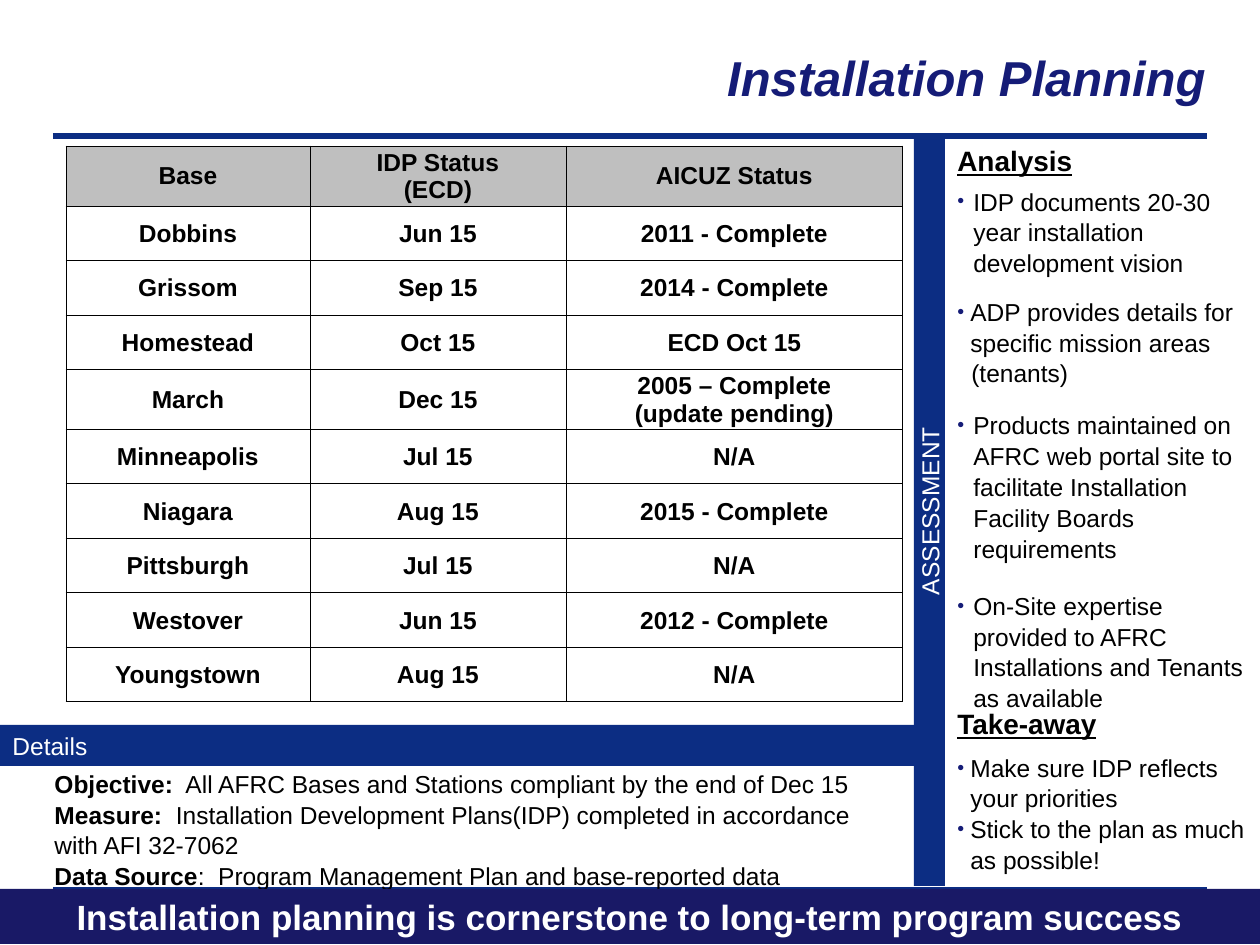
from dataclasses import dataclass

from lxml.etree import SubElement
from pptx import Presentation
from pptx.dml.color import RGBColor
from pptx.enum.shapes import MSO_CONNECTOR, MSO_SHAPE
from pptx.enum.text import MSO_ANCHOR, PP_ALIGN
from pptx.oxml.ns import qn
from pptx.util import Emu, Pt


@dataclass(frozen=True)
class Theme:
    font: str = "Arial"
    blue: str = "0C2D83"
    navy: str = "191966"
    title_ink: str = "151C77"
    black: str = "000000"
    white: str = "FFFFFF"
    header_gray: str = "BFBFBF"
    body: int = 14
    heading: int = 16
    banner: int = 20
    title: int = 28
    spacing: float = 1.05


THEME = Theme()

# Content
TITLE = "Installation Planning"
BANNER = "Installation planning is cornerstone to long-term program success"
STATUS_ROWS = [
    ("Base", "IDP Status\n(ECD)", "AICUZ Status"),
    ("Dobbins", "Jun 15", "2011 - Complete"),
    ("Grissom", "Sep 15", "2014 - Complete"),
    ("Homestead", "Oct 15", "ECD Oct 15"),
    ("March", "Dec 15", "2005 – Complete\n(update pending)"),
    ("Minneapolis", "Jul 15", "N/A"),
    ("Niagara", "Aug 15", "2015 - Complete"),
    ("Pittsburgh", "Jul 15", "N/A"),
    ("Westover", "Jun 15", "2012 - Complete"),
    ("Youngstown", "Aug 15", "N/A"),
]
DETAILS = [
    ("Objective:", "  All AFRC Bases and Stations compliant by the end of Dec 15"),
    ("Measure:", "  Installation Development Plans(IDP) completed in accordance "
                 "with AFI 32-7062"),
    ("Data Source", ":  Program Management Plan and base-reported data"),
]
# Text, bulleted, indent in px, space before in points
ANALYSIS = [
    ("IDP documents 20-30 year installation development vision", True, 16, 0),
    ("ADP provides details for specific mission areas", True, 13, 10),
    ("(tenants)", False, 14, 0),
    ("Products maintained on AFRC web portal site to facilitate Installation "
     "Facility Boards requirements", True, 16, 12),
    ("On-Site expertise provided to AFRC Installations and Tenants as available",
     True, 16, 15),
]
TAKE_AWAY = [
    ("Make sure IDP reflects your priorities", True, 13, 0),
    ("Stick to the plan as much as possible!", True, 13, 0),
]

# Layout in px
SLIDE_W, SLIDE_H = 1260, 945
RULE_LEFT, RULE_RIGHT, RULE_TOP, RULE_BOTTOM = 53, 1207, 136, 890
BAR_LEFT, BAR_W = 914, 31
SIDE_LEFT = BAR_LEFT + BAR_W
SIDE_W = SLIDE_W - SIDE_LEFT
TABLE_LEFT, TABLE_TOP, TABLE_H = 66, 146, 556
COLUMN_WIDTHS = (244, 256, 337)
TALL_ROW = 60


def px(value):
    return Emu(round(value * 914400 / 126))


def rgb(color):
    return RGBColor.from_string(color)


def add_run(paragraph, text, size=THEME.body, color=THEME.black, bold=False,
            italic=False, underline=False):
    run = paragraph.add_run()
    run.text = text
    font = run.font
    font.name, font.size, font.color.rgb = THEME.font, Pt(size), rgb(color)
    font.bold, font.italic, font.underline = bold, italic, underline


def next_paragraph(frame, index, align=PP_ALIGN.LEFT):
    paragraph = frame.add_paragraph() if index else frame.paragraphs[0]
    paragraph.alignment = align
    return paragraph


def add_text(box, paragraphs, align=PP_ALIGN.LEFT):
    """Fill a text box; each paragraph is a list of (text, run options)."""
    text_box = slide.shapes.add_textbox(*map(px, box))
    text_box.text_frame.word_wrap = True
    for index, runs in enumerate(paragraphs):
        paragraph = next_paragraph(text_box.text_frame, index, align)
        paragraph.line_spacing = THEME.spacing
        for text, options in runs:
            add_run(paragraph, text, **options)


def add_bullets(box, items):
    frame = slide.shapes.add_textbox(*map(px, box)).text_frame
    frame.word_wrap = True
    for index, (text, bulleted, indent, before) in enumerate(items):
        paragraph = next_paragraph(frame, index)
        paragraph.line_spacing = THEME.spacing
        if before:
            paragraph.space_before = Pt(before)
        props = paragraph._p.get_or_add_pPr()
        props.set("marL", str(px(indent)))
        if bulleted:
            props.set("indent", str(-px(indent)))
            bullet_color = SubElement(props, qn("a:buClr"))
            SubElement(bullet_color, qn("a:srgbClr"), val=THEME.title_ink)
            SubElement(props, qn("a:buSzPct"), val="80000")
            SubElement(props, qn("a:buFont"), typeface=THEME.font)
            SubElement(props, qn("a:buChar"), char="•")
        add_run(paragraph, text)


def add_band(box, fill, text, size, align, bold=False, vertical=False):
    band = slide.shapes.add_shape(MSO_SHAPE.RECTANGLE, *map(px, box))
    band.shadow.inherit = False
    band.fill.solid()
    band.fill.fore_color.rgb = rgb(fill)
    band.line.fill.background()
    frame = band.text_frame
    frame.word_wrap = True
    frame.vertical_anchor = MSO_ANCHOR.MIDDLE
    if vertical:
        frame._txBody.bodyPr.set("vert", "vert270")
    add_run(next_paragraph(frame, 0, align), text, size, THEME.white, bold)


def add_rule(y):
    rule = slide.shapes.add_connector(
        MSO_CONNECTOR.STRAIGHT, px(RULE_LEFT), px(y), px(RULE_RIGHT), px(y))
    rule.line.color.rgb = rgb(THEME.blue)
    rule.line.width = Pt(3)
    SubElement(rule._element.spPr, qn("a:effectLst"))


def style_cell(cell, text, is_header):
    cell.margin_left = cell.margin_right = cell.margin_top = px(1)
    cell.margin_bottom = 0
    cell.vertical_anchor = MSO_ANCHOR.MIDDLE
    for index, line in enumerate(text.split("\n")):
        paragraph = next_paragraph(cell.text_frame, index, PP_ALIGN.CENTER)
        add_run(paragraph, line, bold=True)
    props = cell._tc.get_or_add_tcPr()
    for side in ("lnL", "lnR", "lnT", "lnB"):
        border = SubElement(props, qn(f"a:{side}"), w=str(Pt(0.5)))
        fill = SubElement(border, qn("a:solidFill"))
        SubElement(fill, qn("a:srgbClr"), val=THEME.black)
    if is_header:
        cell.fill.solid()
        cell.fill.fore_color.rgb = rgb(THEME.header_gray)
    else:
        cell.fill.background()


def add_status_table():
    table = slide.shapes.add_table(
        len(STATUS_ROWS), len(COLUMN_WIDTHS), px(TABLE_LEFT), px(TABLE_TOP),
        px(sum(COLUMN_WIDTHS)), px(TABLE_H)).table
    table.horz_banding = False
    for column, width in zip(table.columns, COLUMN_WIDTHS):
        column.width = px(width)
    # Two-line rows are tall; the others share what is left
    tall = [any("\n" in text for text in row) for row in STATUS_ROWS]
    short_row = (TABLE_H - TALL_ROW * sum(tall)) / tall.count(False)
    for r, texts in enumerate(STATUS_ROWS):
        table.rows[r].height = px(TALL_ROW if tall[r] else short_row)
        for c, text in enumerate(texts):
            style_cell(table.cell(r, c), text, r == 0)


prs = Presentation()
prs.slide_width, prs.slide_height = px(SLIDE_W), px(SLIDE_H)
slide = prs.slides.add_slide(prs.slide_layouts[6])
side_heading = dict(size=THEME.heading, bold=True, underline=True)

# Frame: rules and section bars
add_rule(RULE_BOTTOM)
add_rule(RULE_TOP)
add_band((BAR_LEFT, RULE_TOP, BAR_W, 750), THEME.blue, "ASSESSMENT",
         THEME.body, PP_ALIGN.CENTER, vertical=True)
add_band((0, 725, BAR_LEFT, 41), THEME.blue, "Details", THEME.body, PP_ALIGN.LEFT)

# Main area: details, status table, title, banner
add_text((42, 761, 861, 131),
         [[(label, dict(bold=True)), (text, {})] for label, text in DETAILS])
add_status_table()
add_text((11, 38, 1207, 63),
         [[(TITLE, dict(size=THEME.title, color=THEME.title_ink, bold=True,
                        italic=True))]], PP_ALIGN.RIGHT)
add_band((0, 889, SLIDE_W, 55), THEME.navy, BANNER, THEME.banner,
         PP_ALIGN.CENTER, bold=True)

# Assessment column
add_text((SIDE_LEFT, RULE_TOP, SIDE_W, 43), [[("Analysis", side_heading)]])
add_bullets((SIDE_LEFT, 179, SIDE_W, 535), ANALYSIS)
add_text((SIDE_LEFT, 699, SIDE_W, 53), [[("Take-away", side_heading)]])
add_bullets((SIDE_LEFT, 745, SIDE_W, 144), TAKE_AWAY)

prs.save("out.pptx")
